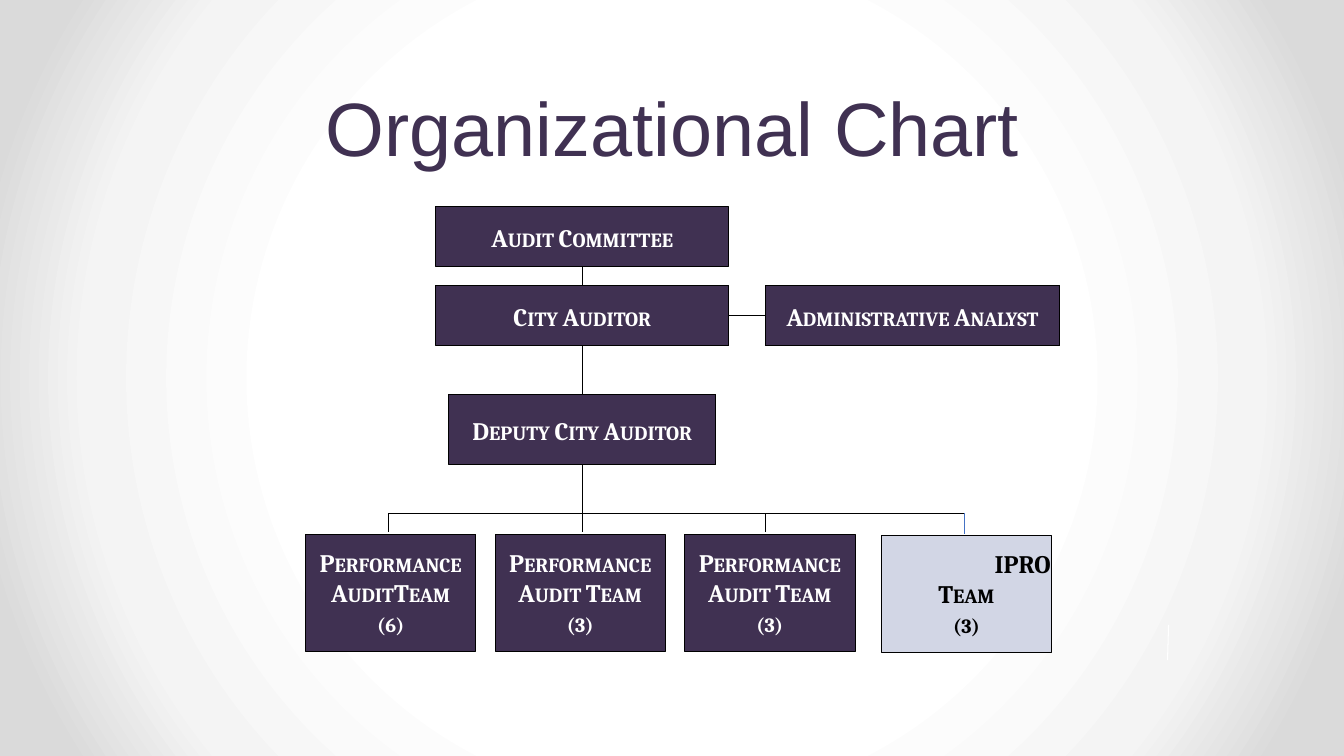
"""Build the organizational chart slide of a city auditor's office."""
import lxml.etree
import pptx
import pptx.dml.color
import pptx.enum.shapes
import pptx.enum.text
import pptx.oxml
import pptx.oxml.ns
import pptx.util

Inches, Pt = pptx.util.Inches, pptx.util.Pt
RGB = pptx.dml.color.RGBColor.from_string
ALIGN, ANCHOR = pptx.enum.text.PP_ALIGN, pptx.enum.text.MSO_ANCHOR
PROCESS = pptx.enum.shapes.MSO_SHAPE.FLOWCHART_PROCESS
STRAIGHT = pptx.enum.shapes.MSO_CONNECTOR.STRAIGHT
NS = "http://schemas.openxmlformats.org/drawingml/2006/main"

THEME = {
    "plum": "403152", "pale": "D2D6E5", "black": "000000", "white": "FFFFFF",
    "blue": "4472C4", "title_font": "Arial", "box_font": "Cambria",
    "title_size": 54, "title_spacing": 58, "box_size": 18,
    "line": 0.75, "thin": 0.5,
    "background": [(50, "FFFFFF"), (76, "F4F4F4"), (92, "DADADA")],
}


def add_box(x, y, w, h, lines, fill="plum", color="white"):
    sp = s.shapes.add_shape(PROCESS, Inches(x), Inches(y), Inches(w), Inches(h))
    sp.shadow.inherit = False
    sp.fill.solid()
    sp.fill.fore_color.rgb = RGB(THEME[fill])
    sp.line.color.rgb = RGB(THEME["black"])
    sp.line.width = Pt(THEME["line"])
    tf = sp.text_frame
    tf.word_wrap = True
    tf.vertical_anchor = ANCHOR.MIDDLE
    for i, text in enumerate(lines):
        p = tf.add_paragraph() if i else tf.paragraphs[0]
        p.alignment = ALIGN.CENTER
        if len(lines) == 1:
            p.line_spacing = 1.07
            p.space_after = Pt(8)
        r = p.add_run()
        r.text = text
        r.font.name = THEME["box_font"]
        r.font.size = Pt(THEME["box_size"])
        r.font.bold = True
        r.font.color.rgb = RGB(THEME[color])
        r.font._element.set("cap", "small")
    return sp


def add_line(x1, y1, x2, y2, color="black", width="line"):
    cx = s.shapes.add_connector(STRAIGHT, Inches(x1), Inches(y1), Inches(x2), Inches(y2))
    cx.line.color.rgb = RGB(THEME[color])
    cx.line.width = Pt(THEME[width])
    lxml.etree.SubElement(cx._element.spPr, pptx.oxml.ns.qn("a:effectLst"))
    return cx


prs = pptx.Presentation()
prs.slide_width, prs.slide_height = Inches(13.33), Inches(7.5)
s = prs.slides.add_slide(prs.slide_layouts[5])

s.background.fill.gradient()
grad = s.background._cSld.bg.bgPr.find(pptx.oxml.ns.qn("a:gradFill"))
stops = "".join(
    f'<a:gs pos="{pos * 1000}"><a:srgbClr val="{color}"/></a:gs>'
    for pos, color in THEME["background"]
)
radial = pptx.oxml.parse_xml(
    f'<a:gradFill xmlns:a="{NS}" rotWithShape="1"><a:gsLst>{stops}</a:gsLst>'
    '<a:path path="circle"><a:fillToRect l="50000" t="50000" r="50000" b="50000"/>'
    "</a:path></a:gradFill>"
)
grad.getparent().replace(grad, radial)

title = s.shapes.title
title.left, title.top, title.width, title.height = Inches(0.67), 0, Inches(12), Inches(1.75)
tf = title.text_frame
tf.word_wrap = True
tf.auto_size = pptx.enum.text.MSO_AUTO_SIZE.NONE
tf.vertical_anchor = ANCHOR.BOTTOM
p = tf.paragraphs[0]
p.alignment = ALIGN.CENTER
p.line_spacing = Pt(THEME["title_spacing"])
r = p.add_run()
r.text = "Organizational Chart"
r.font.name = THEME["title_font"]
r.font.size = Pt(THEME["title_size"])
r.font.color.rgb = RGB(THEME["plum"])

committee = add_box(4.32, 2.05, 2.91, 0.59, ["Audit Committee"])
auditor = add_box(4.32, 2.83, 2.91, 0.6, ["City Auditor"])
analyst = add_box(7.59, 2.83, 2.92, 0.6, ["Administrative Analyst"])
deputy = add_box(4.45, 3.91, 2.65, 0.7, ["Deputy City Auditor"])

team_w, team_h, team_y, team_step = 1.69, 1.16, 5.3, 1.88
for i, (name, count) in enumerate([("AuditTeam", 6), ("Audit Team", 3), ("Audit Team", 3)]):
    add_box(3.03 + i * team_step, team_y, team_w, team_h, ["Performance", name, f"({count})"])
ipro = add_box(8.74, 5.31, team_w, team_h, ["IPRO", "Team", "(3)"], "pale", "black")
ipro.text_frame.paragraphs[0]._p.get_or_add_pPr().set("marL", str(Inches(0.56)))

for upper, lower, start, end in [
    (committee, auditor, 2, 0), (auditor, deputy, 2, 0), (analyst, auditor, 1, 3),
]:
    cx = add_line(0, 0, 1, 1)
    cx.begin_connect(upper, start)
    cx.end_connect(lower, end)

bus_y, drop_y, trunk_x = 5.09, 5.28, 4.45 + 2.65 / 2
trunk = add_line(trunk_x, 4.61, trunk_x, drop_y)
trunk.begin_connect(deputy, 2)
add_line(3.85, bus_y, 9.56, bus_y)
for x in (3.85, 7.59):
    add_line(x, bus_y, x, drop_y)
add_line(9.56, bus_y, 9.56, team_y, "blue", "thin")
add_line(11.59, 6.2, 11.58, 6.55, "white")

prs.save("out.pptx")
